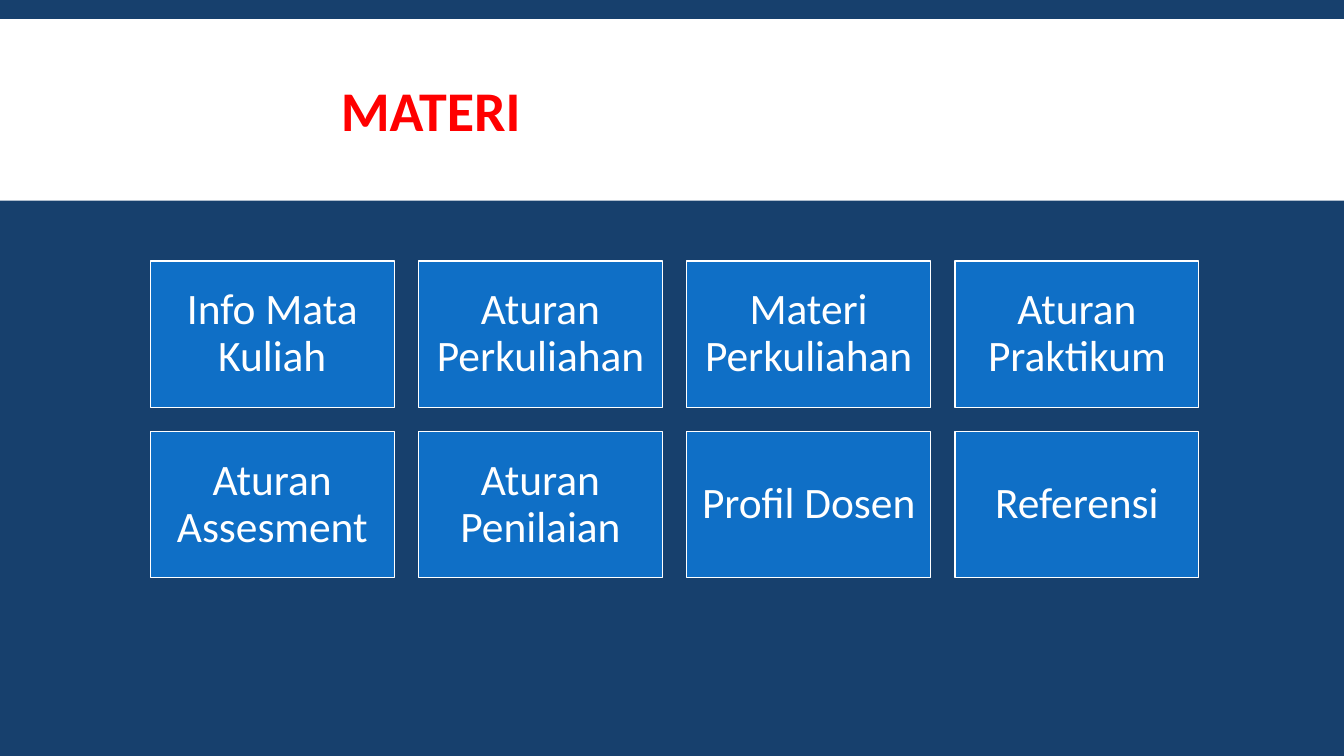
from pptx import Presentation
from pptx.dml.color import RGBColor
from pptx.enum.shapes import MSO_SHAPE
from pptx.enum.text import MSO_ANCHOR, PP_ALIGN
from pptx.util import Inches, Pt

TOPICS = [
    "Info Mata Kuliah", "Aturan Perkuliahan", "Materi Perkuliahan", "Aturan Praktikum",
    "Aturan Assesment", "Aturan Penilaian", "Profil Dosen", "Referensi",
]
COLUMNS = 4
CARD_W, CARD_H, GAP = 2.42, 1.45, 0.24
GRID_LEFT, GRID_TOP = 1.49, 2.59


def set_color(fmt, color):
    """Colour a fill, or the fill of a line, from a hex string."""
    fmt.solid()
    fmt.fore_color.rgb = RGBColor.from_string(color)


def add_box(s, left, top, width, height, fill):
    sp = s.shapes.add_shape(MSO_SHAPE.RECTANGLE, Inches(left), Inches(top),
                            Inches(width), Inches(height))
    sp.shadow.inherit = False
    set_color(sp.fill, fill)
    sp.line.fill.background()
    return sp


def write_text(tf, text, size, color, align, spacing, bold=False):
    tf.word_wrap = True
    tf.vertical_anchor = MSO_ANCHOR.MIDDLE
    tf.text = text
    p = tf.paragraphs[0]
    p.alignment = align
    p.line_spacing = spacing
    r = p.runs[0]
    r.font.name = "Calibri"
    r.font.size = Pt(size)
    r.font.bold = bold
    set_color(r.font.fill, color)


def add_title(s, text):
    title = s.shapes.title
    title.left, title.top = Inches(3.28), Inches(0.31)
    title.width, title.height = Inches(8.73), Inches(1.65)
    write_text(title.text_frame, text, 40, "FF0000", PP_ALIGN.LEFT, 0.85, bold=True)
    # White band, placed behind the title
    band = add_box(s, 0, 0.19, 13.33, 1.8, "FFFFFF")
    title.element.addprevious(band.element)


def add_card(s, left, top, text):
    sp = add_box(s, left, top, CARD_W, CARD_H, "0F6FC6")
    set_color(sp.line.fill, "FFFFFF")
    sp.line.width = Pt(1)
    tf = sp.text_frame
    tf.margin_left = tf.margin_right = Inches(0.13)
    tf.margin_top = tf.margin_bottom = Inches(0.13)
    write_text(tf, text, 31, "FFFFFF", PP_ALIGN.CENTER, 0.9)


def main():
    prs = Presentation()
    prs.slide_width, prs.slide_height = Inches(13.33), Inches(7.5)
    s = prs.slides.add_slide(prs.slide_layouts[5])
    set_color(s.background.fill, "17406D")

    # Header
    add_title(s, "MATERI")

    # Grid of topics
    for i, topic in enumerate(TOPICS):
        row, col = divmod(i, COLUMNS)
        add_card(s, GRID_LEFT + col * (CARD_W + GAP), GRID_TOP + row * (CARD_H + GAP), topic)

    prs.save("out.pptx")


if __name__ == "__main__":
    main()
